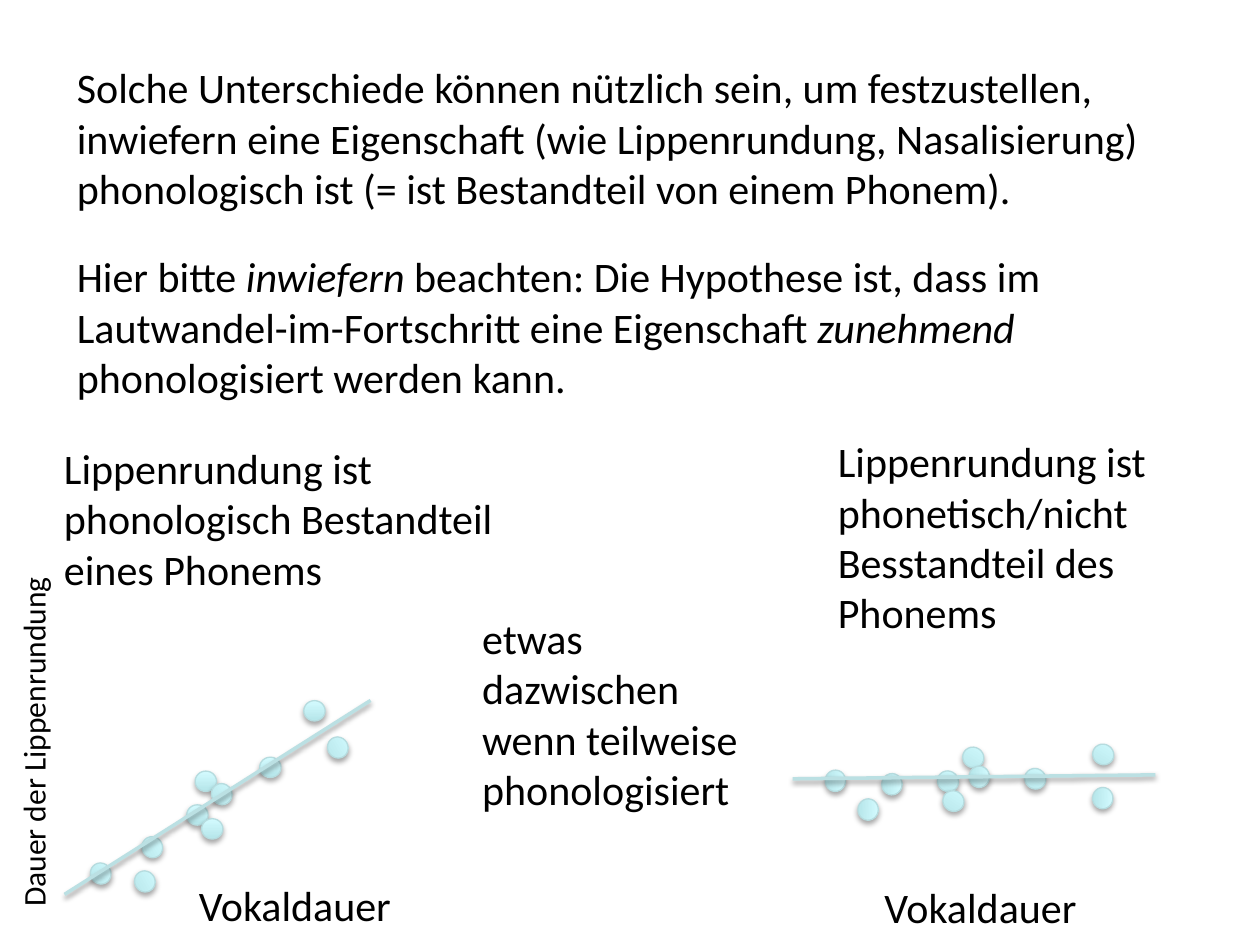
from dataclasses import dataclass

from lxml.etree import SubElement
from pptx import Presentation
from pptx.dml.color import RGBColor
from pptx.enum.shapes import MSO_CONNECTOR, MSO_SHAPE
from pptx.enum.text import MSO_AUTO_SIZE
from pptx.oxml.ns import qn
from pptx.util import Cm, Pt


@dataclass(frozen=True)
class Theme:
    font: str = "Calibri"
    body_size: int = 24
    axis_size: int = 18
    text: str = "000000"
    shadow: str = "000000"
    dot_bottom: str = "B5E5E9"
    dot_top: str = "D3FBFF"
    dot_edge: str = "B6DCDF"
    trend: str = "BBE0E3"


def rgb(value):
    return RGBColor.from_string(value)


class SlideBuilder:
    DOT_WIDTH, DOT_HEIGHT = 0.43, 0.41
    DOT_TURN = 60.6

    def __init__(self, slide, theme):
        self.slide = slide
        self.theme = theme

    def text(self, spans, left, top, width, height, size=None, wrap=True, rotation=0):
        """Add one paragraph; every second span is italic."""
        box = self.slide.shapes.add_textbox(Cm(left), Cm(top), Cm(width), Cm(height))
        box.rotation = rotation
        frame = box.text_frame
        frame.word_wrap = wrap
        frame.auto_size = MSO_AUTO_SIZE.SHAPE_TO_FIT_TEXT
        para = frame.paragraphs[0]
        for index, content in enumerate(spans):
            span = para.add_run()
            span.text = content
            span.font.name = self.theme.font
            span.font.size = Pt(size or self.theme.body_size)
            span.font.italic = index % 2 == 1
            span.font.color.rgb = rgb(self.theme.text)

    def cast_shadow(self, shape, distance, opacity):
        effects = SubElement(shape._element.spPr, qn("a:effectLst"))
        outer = SubElement(effects, qn("a:outerShdw"), blurRad=str(Pt(3.1)),
                           dist=str(Pt(distance)), dir="5400000", rotWithShape="0")
        color = SubElement(outer, qn("a:srgbClr"), val=self.theme.shadow)
        SubElement(color, qn("a:alpha"), val=str(opacity * 1000))

    def dot(self, group, center, rotation):
        x, y = center
        dot = group.shapes.add_shape(
            MSO_SHAPE.OVAL, Cm(x - self.DOT_WIDTH / 2), Cm(y - self.DOT_HEIGHT / 2),
            Cm(self.DOT_WIDTH), Cm(self.DOT_HEIGHT))
        dot.rotation = rotation
        dot.fill.gradient()
        dot.fill.gradient_angle = 90
        colors = (self.theme.dot_bottom, self.theme.dot_top)
        for stop, color in zip(dot.fill.gradient_stops, colors):
            stop.color.rgb = rgb(color)
        dot.line.color.rgb = rgb(self.theme.dot_edge)
        dot.line.width = Pt(0.75)
        self.cast_shadow(dot, distance=1.8, opacity=35)

    def trend_line(self, group, start, end):
        line = group.shapes.add_connector(
            MSO_CONNECTOR.STRAIGHT, *(Cm(value) for value in (*start, *end)))
        line.line.color.rgb = rgb(self.theme.trend)
        line.line.width = Pt(2)
        self.cast_shadow(line, distance=1.6, opacity=38)

    def scatter(self, level_dots, turned_dots, start, end, tilt=0):
        """Group a cloud of dots with its trend line."""
        group = self.slide.shapes.add_group_shape()
        for center in level_dots:
            self.dot(group, center, tilt)
        for center in turned_dots:
            self.dot(group, center, tilt + self.DOT_TURN)
        self.trend_line(group, start, end)


def main():
    deck = Presentation()
    deck.slide_width, deck.slide_height = Cm(25.4), Cm(19.05)
    theme = Theme()
    page = SlideBuilder(deck.slides.add_slide(deck.slide_layouts[6]), theme)

    page.text(["Solche Unterschiede können nützlich sein, um festzustellen, "
               "inwiefern eine Eigenschaft (wie Lippenrundung, Nasalisierung) "
               "phonologisch ist (= ist Bestandteil von einem Phonem)."],
              1.3, 1.12, 22.2, 3.33)
    page.text(["Hier bitte ", "inwiefern",
               " beachten: Die Hypothese ist, dass im Lautwandel-im-Fortschritt "
               "eine Eigenschaft ", "zunehmend ", "phonologisiert werden kann."],
              1.3, 4.93, 21.41, 3.33)
    page.text(["Lippenrundung ist phonologisch Bestandteil eines Phonems"],
              1.04, 8.79, 10.21, 3.33)
    page.text(["Lippenrundung ist phonetisch/nicht Besstandteil des Phonems"],
              16.64, 8.66, 7.01, 4.37)

    page.scatter(
        level_dots=[(4.15, 15.75), (3.98, 16.43), (5.45, 15.47), (4.28, 16.71),
                    (6.34, 14.33)],
        turned_dots=[(4.47, 16.01), (3.07, 17.08), (6.81, 15.07), (2.92, 17.77),
                     (2.03, 17.61)],
        start=(1.3, 18.03), end=(7.47, 14.12))
    page.scatter(
        level_dots=[(19.62, 15.27), (19.11, 15.75), (20.87, 15.7), (19.22, 16.15),
                    (22.24, 15.21)],
        turned_dots=[(19.74, 15.66), (17.98, 15.81), (22.23, 16.09), (17.5, 16.32),
                     (16.84, 15.74)],
        start=(15.98, 15.7), end=(23.29, 15.62), tilt=31.9)

    for left, top in ((3.76, 17.6), (17.58, 17.65)):
        page.text(["Vokaldauer"], left, top, 4.42, 1.27, wrap=False)
    page.text(["etwas dazwischen wenn teilweise phonologisiert"],
              9.47, 12.22, 5.74, 4.37)
    page.text(["Dauer der Lippenrundung"], -2.95, 14.4, 7.24, 1.02,
              size=theme.axis_size, wrap=False, rotation=270)

    deck.save("out.pptx")


if __name__ == "__main__":
    main()
